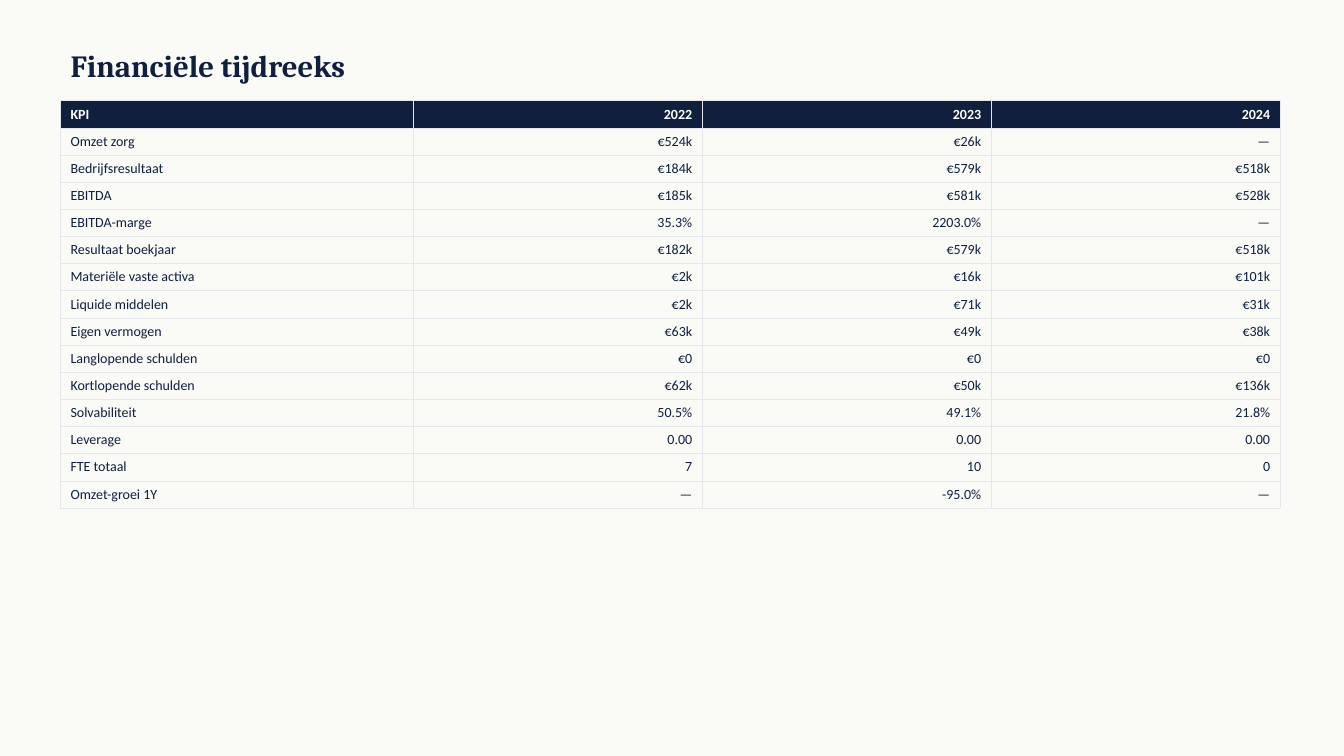
"""Builds a slide with a table of yearly financial figures."""
from dataclasses import dataclass

from lxml import etree
from pptx import Presentation
from pptx.dml.color import RGBColor
from pptx.enum.text import MSO_ANCHOR, MSO_AUTO_SIZE, PP_ALIGN
from pptx.oxml.ns import qn
from pptx.slide import Slide
from pptx.table import _Cell
from pptx.text.text import TextFrame
from pptx.util import Pt

LEFT, RIGHT = PP_ALIGN.LEFT, PP_ALIGN.RIGHT
MIDDLE = MSO_ANCHOR.MIDDLE
NO_FIT = MSO_AUTO_SIZE.NONE
NAVY, WHITE, PAPER, RULE = "0F1F3D", "FFFFFF", "FAFAF7", "E5E7EB"
EDGE, WIDTH, FIRST, HIGH = 43.2, 871.2, 252, 19.4
YEARS = ("2022", "2023", "2024")


@dataclass(frozen=True)
class Kpi:
    name: str
    values: tuple[str, ...]


@dataclass(frozen=True)
class Style:
    font: str
    size: float
    tint: str
    bold: bool


TITLE = Style("Cambria", 22, NAVY, True)
HEAD = Style("Calibri", 10, WHITE, True)
BODY = Style("Calibri", 10, NAVY, False)

KPIS = [
    Kpi("Omzet zorg", ("€524k", "€26k", "—")),
    Kpi("Bedrijfsresultaat", ("€184k", "€579k", "€518k")),
    Kpi("EBITDA", ("€185k", "€581k", "€528k")),
    Kpi("EBITDA-marge", ("35.3%", "2203.0%", "—")),
    Kpi("Resultaat boekjaar", ("€182k", "€579k", "€518k")),
    Kpi("Materiële vaste activa", ("€2k", "€16k", "€101k")),
    Kpi("Liquide middelen", ("€2k", "€71k", "€31k")),
    Kpi("Eigen vermogen", ("€63k", "€49k", "€38k")),
    Kpi("Langlopende schulden", ("€0", "€0", "€0")),
    Kpi("Kortlopende schulden", ("€62k", "€50k", "€136k")),
    Kpi("Solvabiliteit", ("50.5%", "49.1%", "21.8%")),
    Kpi("Leverage", ("0.00", "0.00", "0.00")),
    Kpi("FTE totaal", ("7", "10", "0")),
    Kpi("Omzet-groei 1Y", ("—", "-95.0%", "—")),
]


def color(code: str) -> RGBColor:
    return RGBColor.from_string(code)


def write(frame: TextFrame, text: str, style: Style, align: PP_ALIGN) -> None:
    frame.text = text
    para = frame.paragraphs[0]
    para.alignment = align
    font = para.runs[0].font
    font.name, font.size, font.bold = style.font, Pt(style.size), style.bold
    font.color.rgb = color(style.tint)


def border(cell: _Cell) -> None:
    props = cell._tc.get_or_add_tcPr()
    for side in ("L", "R", "T", "B"):
        line = etree.SubElement(props, qn(f"a:ln{side}"), w=str(Pt(0.5)))
        fill = etree.SubElement(line, qn("a:solidFill"))
        etree.SubElement(fill, qn("a:srgbClr"), val=RULE)


def add_title(slide: Slide, text: str) -> None:
    title = slide.shapes.title
    title.left, title.top = Pt(EDGE), Pt(28.8)
    title.width, title.height = Pt(864), Pt(36)
    frame = title.text_frame
    frame.auto_size = NO_FIT
    frame.vertical_anchor = MIDDLE
    write(frame, text, TITLE, LEFT)


def add_grid(slide: Slide, rows: list[Kpi]) -> None:
    count = len(YEARS) + 1
    table = slide.shapes.add_table(
        len(rows), count, Pt(EDGE), Pt(72), Pt(WIDTH), Pt(HIGH * len(rows))
    ).table
    table.horz_banding = False
    for col, column in enumerate(table.columns):
        column.width = Pt((WIDTH - FIRST) / len(YEARS) if col else FIRST)
    for row, kpi in enumerate(rows):
        table.rows[row].height = Pt(HIGH)
        for col, text in enumerate((kpi.name, *kpi.values)):
            cell = table.cell(row, col)
            write(cell.text_frame, text, BODY if row else HEAD, RIGHT if col else LEFT)
            border(cell)
            if row:
                cell.fill.background()
            else:
                cell.fill.solid()
                cell.fill.fore_color.rgb = color(NAVY)


def main() -> None:
    deck = Presentation()
    deck.slide_width, deck.slide_height = Pt(960), Pt(540)
    slide = deck.slides.add_slide(deck.slide_layouts.get_by_name("Title Only"))
    back = slide.background.fill
    back.solid()
    back.fore_color.rgb = color(PAPER)
    add_title(slide, "Financiële tijdreeks")
    add_grid(slide, [Kpi("KPI", YEARS), *KPIS])
    deck.save("out.pptx")


if __name__ == "__main__":
    main()
